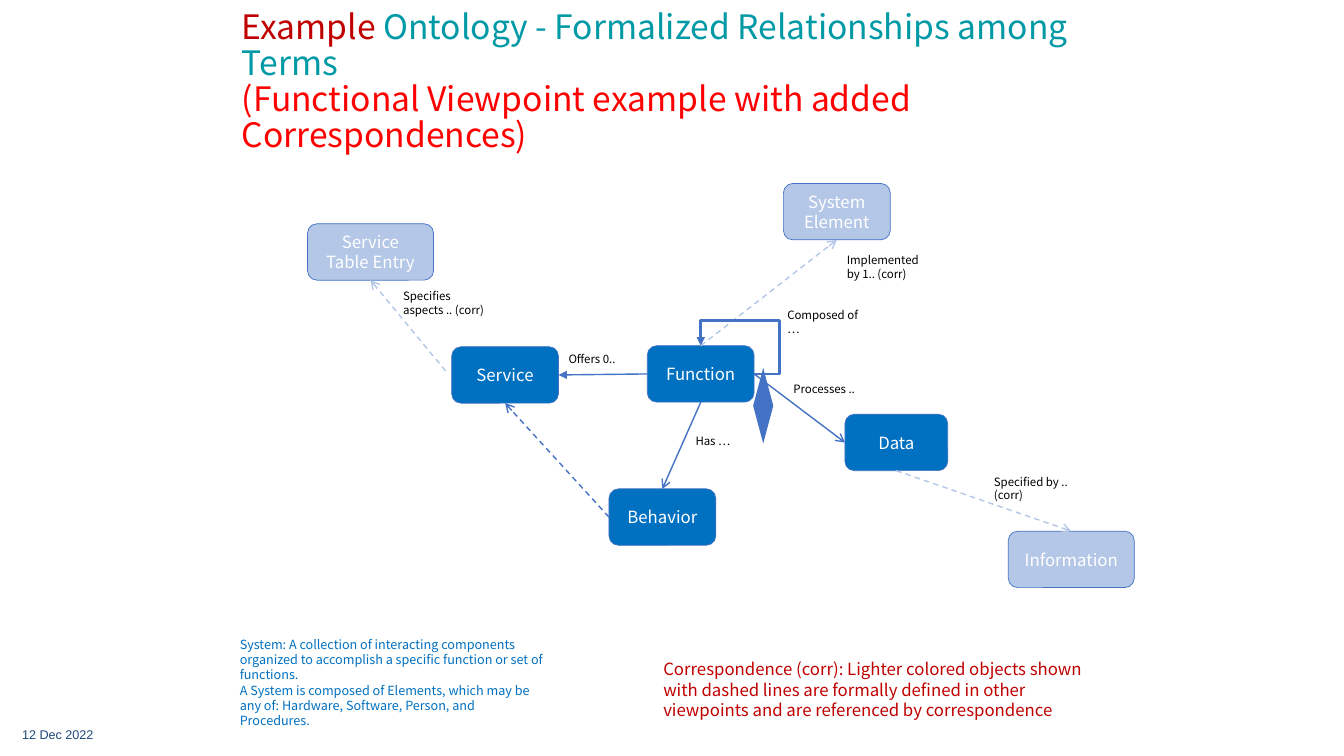
from dataclasses import dataclass

from pptx import Presentation
from pptx import util as u
from pptx.dml.color import RGBColor
from pptx.enum import dml, shapes, text
from pptx.oxml.ns import qn
from lxml import etree


@dataclass(frozen=True)
class Theme:
    font: str = "Noto Sans CJK JP"
    date_font: str = "Arial"
    box: str = "0070C0"
    light: str = "B4C7E7"
    line: str = "4472C4"
    white: str = "FFFFFF"
    black: str = "000000"
    dark_red: str = "C00000"
    red: str = "FF0000"
    teal: str = "0099A6"
    navy: str = "1F497D"
    title_size: float = 24
    body_size: float = 12
    note_size: float = 9
    label_size: float = 8.2


THEME = Theme()
BOX_HEIGHT = 0.56

# name: (left, top, width, fill, lines)
BOXES = {
    "behavior": (6.04, 4.85, 1.06, THEME.box, ["Behavior"]),
    "element": (7.77, 1.82, 1.06, THEME.light, ["System", "Element"]),
    "function": (6.42, 3.43, 1.06, THEME.box, ["Function"]),
    "data": (8.38, 4.11, 1.02, THEME.box, ["Data"]),
    "service": (4.48, 3.44, 1.06, THEME.box, ["Service"]),
    "information": (10, 5.27, 1.25, THEME.light, ["Information"]),
    "entry": (3.05, 2.22, 1.25, THEME.light, ["Service Table Entry"]),
}

# (from box, side, to box, side, colour, dashed, arrowhead)
RELATIONS = [
    ("function", "right", "data", "left", THEME.line, False, "arrow"),
    ("function", "top", "element", "bottom", THEME.light, True, "arrow"),
    ("function", "left", "service", "right", THEME.line, False, "triangle"),
    ("function", "bottom", "behavior", "top", THEME.line, False, "arrow"),
    ("behavior", "left", "service", "bottom", THEME.line, True, "arrow"),
    ("data", "bottom", "information", "top", THEME.light, True, "arrow"),
    ("service", "left", "entry", "bottom", THEME.light, True, "arrow"),
]
START_GAPS = {("service", "entry"): (-0.06, -0.04)}

# (left, top, width, height, wording, wraps)
LABELS = [
    (7.77, 3.74, 0.88, 0.24, "Processes ..", False),
    (8.3, 2.46, 0.95, 0.38, "Implemented by 1.. (corr)", True),
    (5.54, 3.44, 0.75, 0.24, "Offers 0..", True),
    (6.8, 4.26, 0.91, 0.24, "Has …", True),
    (7.71, 3.01, 0.95, 0.38, "Composed of …", True),
    (9.76, 4.66, 0.99, 0.38, "Specified by .. (corr)", True),
    (3.9, 2.82, 1.14, 0.38, "Specifies aspects .. (corr)", True),
]

TITLE = [
    ("Example", THEME.dark_red),
    (" Ontology - Formalized Relationships among Terms", THEME.teal),
    None,
    ("(Functional Viewpoint example with added Correspondences)", THEME.red),
]
SYSTEM_NOTE = [
    "System: A collection of interacting components organized to accomplish "
    "a specific function or set of functions.",
    "A System is composed of Elements, which may be any of: Hardware, "
    "Software, Person, and Procedures.",
]
CORRESPONDENCE_NOTE = [
    "Correspondence (corr): Lighter colored objects shown with dashed lines are "
    "formally defined in other viewpoints and are referenced by correspondence",
]


def rgb(value):
    return RGBColor.from_string(value)


def style_run(run, size, color, font=THEME.font):
    run.font.size = u.Pt(size)
    run.font.name = font
    run.font.color.rgb = rgb(color)


def fill_text(frame, lines, size, color, font=THEME.font, align=None, indent=0):
    frame.text = "\n".join(lines)
    for paragraph in frame.paragraphs:
        paragraph.alignment = align
        if indent:
            paragraph._p.get_or_add_pPr().set("marL", str(u.Inches(indent)))
        for run in paragraph.runs:
            style_run(run, size, color, font)


def add_text(slide, place, lines, size, color, wrap=True, **options):
    frame = slide.shapes.add_textbox(*map(u.Inches, place)).text_frame
    frame.word_wrap = wrap
    fill_text(frame, lines, size, color, **options)
    return frame


def add_title(slide):
    frame = add_text(slide, (2.3, 0.4, 9, 0.84), [], THEME.title_size, THEME.teal)
    frame.vertical_anchor = text.MSO_ANCHOR.MIDDLE
    paragraph = frame.paragraphs[0]
    paragraph.line_spacing = 0.9
    for part in TITLE:
        if part is None:
            paragraph.add_line_break()
            continue
        wording, color = part
        run = paragraph.add_run()
        run.text = wording
        style_run(run, THEME.title_size, color)


def add_box(slide, left, top, width, fill, lines):
    shape = slide.shapes.add_shape(
        shapes.MSO_SHAPE.ROUNDED_RECTANGLE,
        *map(u.Inches, (left, top, width, BOX_HEIGHT)))
    shape.shadow.inherit = False
    shape.fill.solid()
    shape.fill.fore_color.rgb = rgb(fill)
    shape.line.color.rgb = rgb(THEME.line)
    shape.line.width = u.Pt(0.5)
    shape.text_frame.vertical_anchor = text.MSO_ANCHOR.MIDDLE
    fill_text(shape.text_frame, lines, THEME.body_size, THEME.white,
              align=text.PP_ALIGN.CENTER)


def side_point(name, side):
    left, top, width = BOXES[name][:3]
    across, down = {"left": (0, 0.5), "right": (1, 0.5),
                    "top": (0.5, 0), "bottom": (0.5, 1)}[side]
    return left + across * width, top + down * BOX_HEIGHT


def style_line(shape, color, width, head):
    shape.line.color.rgb = rgb(color)
    shape.line.width = u.Pt(width)
    etree.SubElement(shape.line._get_or_add_ln(), qn("a:tailEnd"), type=head)


def add_relation(slide, source, source_side, target, target_side, color, dashed, head):
    x, y = side_point(source, source_side)
    dx, dy = START_GAPS.get((source, target), (0, 0))
    points = (x + dx, y + dy, *side_point(target, target_side))
    connector = slide.shapes.add_connector(
        shapes.MSO_CONNECTOR.STRAIGHT, *map(u.Inches, points))
    if dashed:
        connector.line.dash_style = dml.MSO_LINE.DASH
    style_line(connector, color, 1, head)
    etree.SubElement(connector._element.spPr, qn("a:effectLst"))


def add_self_loop(slide):
    """Draw the loop from the right side of Function back to its top."""
    start, end = side_point("function", "right"), side_point("function", "top")
    right, top = start[0] + 0.25, end[1] - 0.25
    corners = [(right, start[1]), (right, top), (end[0], top), end]
    builder = slide.shapes.build_freeform(*map(u.Inches, start))
    builder.add_line_segments(
        [tuple(map(u.Inches, corner)) for corner in corners], close=False)
    loop = builder.convert_to_shape()
    loop.shadow.inherit = False
    loop.fill.background()
    style_line(loop, THEME.line, 2, "triangle")


def add_diamond(slide):
    diamond = slide.shapes.add_shape(
        shapes.MSO_SHAPE.FLOWCHART_DECISION, *map(u.Inches, (7.47, 3.65, 0.2, 0.75)))
    diamond.shadow.inherit = False
    diamond.fill.solid()
    diamond.fill.fore_color.rgb = rgb(THEME.line)
    diamond.line.fill.background()


def main():
    presentation = Presentation()
    presentation.slide_width, presentation.slide_height = u.Inches(13.33), u.Inches(7.5)
    slide = presentation.slides.add_slide(presentation.slide_layouts[6])
    add_title(slide)
    for box in BOXES.values():
        add_box(slide, *box)
    for relation in RELATIONS:
        add_relation(slide, *relation)
    add_self_loop(slide)
    for *place, wording, wrap in LABELS:
        add_text(slide, place, [wording], THEME.label_size, THEME.black, wrap)
    add_diamond(slide)
    add_text(slide, (1.78, 6.27, 3.74, 1.01), SYSTEM_NOTE,
             THEME.note_size, THEME.box, indent=0.5)
    add_text(slide, (5.98, 6.49, 5.15, 0.71), CORRESPONDENCE_NOTE,
             THEME.body_size, THEME.dark_red, indent=0.5)
    date = add_text(slide, (0.12, 7.15, 1.08, 0.28), ["12 Dec 2022"],
                    THEME.note_size, THEME.navy, font=THEME.date_font)
    date.vertical_anchor = text.MSO_ANCHOR.MIDDLE
    presentation.save("out.pptx")


if __name__ == "__main__":
    main()
